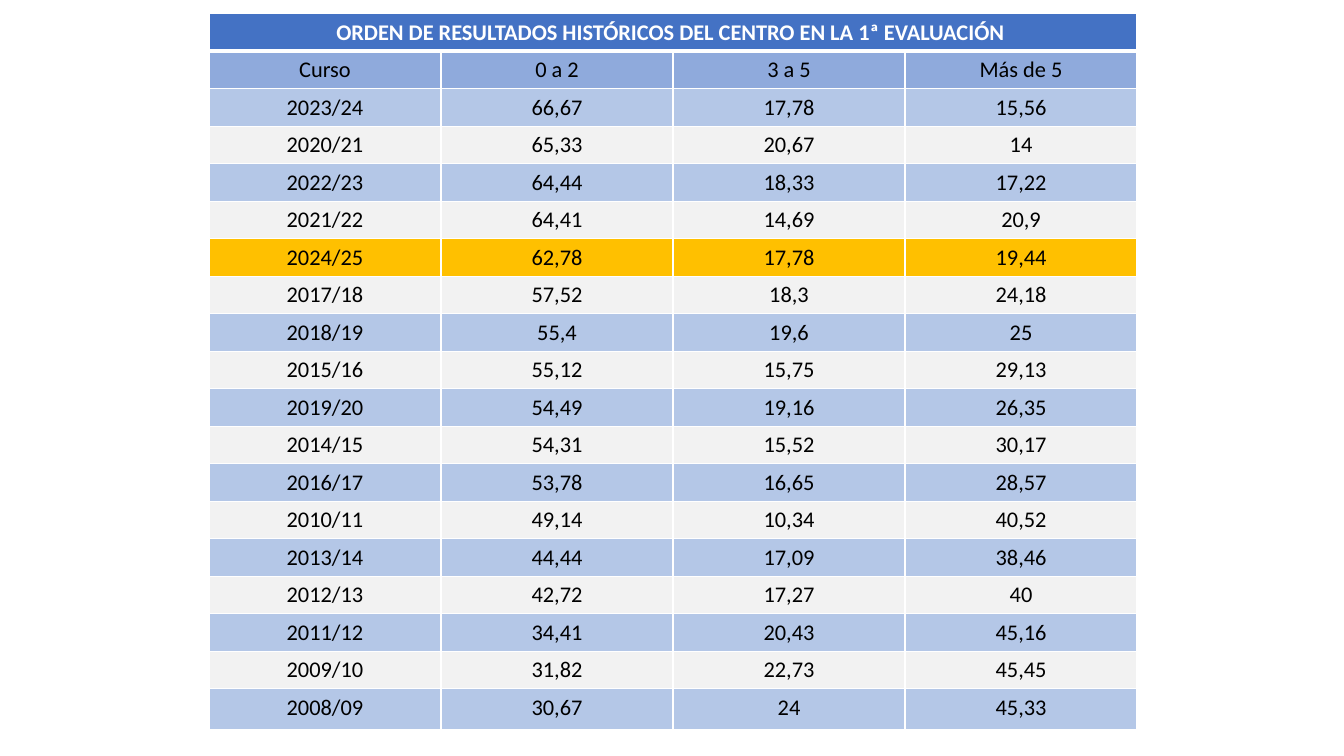
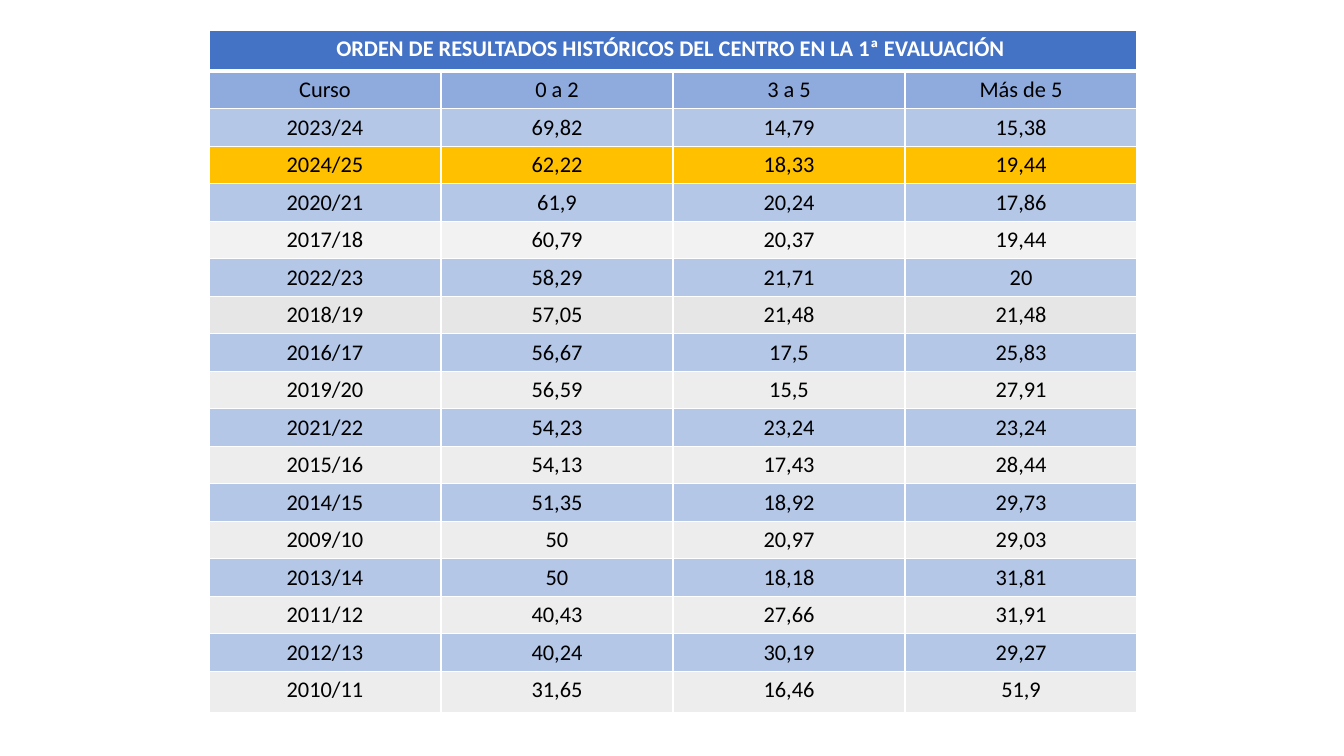
from lxml import etree
from pptx import Presentation
from pptx import util as u
from pptx.dml import color
from pptx.enum import text
from pptx.oxml import ns

PX = 9525
SLIDE_WIDTH, SLIDE_HEIGHT = 1280, 720
TABLE_LEFT, COLUMN_WIDTH = 199, 221
ROW_HEIGHT, TALL_ROW_HEIGHT = 35, 39
FONT_NAME, FONT_SIZE = "Calibri", 16
THIN, THICK = 1, 3

COLORS = {
    "title": "4472C4",
    "heading": "8FAADC",
    "band": "B4C7E7",
    "pale": "F2F2F2",
    "grey": "E7E6E6",
    "light": "EDEDED",
    "highlight": "FFC000",
    "white": "FFFFFF",
    "black": "000000",
}

TITLE = "ORDEN DE RESULTADOS HISTÓRICOS DEL CENTRO EN LA 1ª EVALUACIÓN "
HEADINGS = ("Curso", "0 a 2", "3 a 5", "Más de 5")
CURRENT_COURSE = "2024/25"

FIRST_RESULTS = (
    ("2023/24", "66,67", "17,78", "15,56"),
    ("2020/21", "65,33", "20,67", "14"),
    ("2022/23", "64,44", "18,33", "17,22"),
    ("2021/22", "64,41", "14,69", "20,9"),
    ("2024/25", "62,78", "17,78", "19,44"),
    ("2017/18", "57,52", "18,3", "24,18"),
    ("2018/19", "55,4", "19,6", "25"),
    ("2015/16", "55,12", "15,75", "29,13"),
    ("2019/20", "54,49", "19,16", "26,35"),
    ("2014/15", "54,31", "15,52", "30,17"),
    ("2016/17", "53,78", "16,65", "28,57"),
    ("2010/11", "49,14", "10,34", "40,52"),
    ("2013/14", "44,44", "17,09", "38,46"),
    ("2012/13", "42,72", "17,27", "40"),
    ("2011/12", "34,41", "20,43", "45,16"),
    ("2009/10", "31,82", "22,73", "45,45"),
    ("2008/09", "30,67", "24", "45,33"),
)

SECOND_RESULTS = (
    ("2023/24", "69,82", "14,79", "15,38"),
    ("2024/25", "62,22", "18,33", "19,44"),
    ("2020/21", "61,9", "20,24", "17,86"),
    ("2017/18", "60,79", "20,37", "19,44"),
    ("2022/23", "58,29", "21,71", "20"),
    ("2018/19", "57,05", "21,48", "21,48"),
    ("2016/17", "56,67", "17,5", "25,83"),
    ("2019/20", "56,59", "15,5", "27,91"),
    ("2021/22", "54,23", "23,24", "23,24"),
    ("2015/16", "54,13", "17,43", "28,44"),
    ("2014/15", "51,35", "18,92", "29,73"),
    ("2009/10", "50", "20,97", "29,03"),
    ("2013/14", "50", "18,18", "31,81"),
    ("2011/12", "40,43", "27,66", "31,91"),
    ("2012/13", "40,24", "30,19", "29,27"),
    ("2010/11", "31,65", "16,46", "51,9"),
)


def px(length):
    return u.Emu(length * PX)


def rgb(name):
    return color.RGBColor.from_string(COLORS[name])


def set_borders(cell, top=THIN, bottom=THIN):
    properties = cell._tc.get_or_add_tcPr()
    widths = {"lnL": THIN, "lnR": THIN, "lnT": top, "lnB": bottom}
    for position, (tag, width) in enumerate(widths.items()):
        line = etree.Element(ns.qn(f"a:{tag}"), w=str(u.Pt(width)))
        fill = etree.SubElement(line, ns.qn("a:solidFill"))
        etree.SubElement(fill, ns.qn("a:srgbClr"), val=COLORS["white"])
        properties.insert(position, line)


def fill_cell(cell, fill):
    cell.fill.solid()
    cell.fill.fore_color.rgb = rgb(fill)


def write_cell(cell, content, ink="black", bold=False):
    paragraph = cell.text_frame.paragraphs[0]
    paragraph.alignment = text.PP_ALIGN.CENTER
    run = paragraph.add_run()
    run.text = content
    run.font.name = FONT_NAME
    run.font.size = u.Pt(FONT_SIZE)
    run.font.bold = bold
    run.font.color.rgb = rgb(ink)


def add_title_row(table):
    cells = list(table.rows[0].cells)
    cells[0].merge(cells[-1])
    for cell in cells:
        fill_cell(cell, "title")
        set_borders(cell, bottom=THICK)
    write_cell(cells[0], TITLE, "white", True)


def add_row(table, index, values, fill, top=THIN):
    for cell, value in zip(table.rows[index].cells, values):
        fill_cell(cell, fill)
        set_borders(cell, top=top)
        write_cell(cell, value)


def row_fill(index, course, alternate, exceptions):
    if course == CURRENT_COURSE:
        return "highlight"
    if index % 2 == 0:
        return "band"
    return exceptions.get(course, alternate)


def add_results_slide(presentation, top, title_height, results, alternate, exceptions):
    slide = presentation.slides.add_slide(presentation.slide_layouts[6])
    heights = [title_height] + [ROW_HEIGHT] * len(results) + [TALL_ROW_HEIGHT]
    columns = len(HEADINGS)
    table = slide.shapes.add_table(
        len(heights), columns, px(TABLE_LEFT), px(top),
        px(COLUMN_WIDTH * columns), px(sum(heights)),
    ).table
    table.first_row = table.horz_banding = False
    for column in table.columns:
        column.width = px(COLUMN_WIDTH)
    for row, height in zip(table.rows, heights):
        row.height = px(height)
    add_title_row(table)
    add_row(table, 1, HEADINGS, "heading", top=THICK)
    for index, values in enumerate(results):
        fill = row_fill(index, values[0], alternate, exceptions)
        add_row(table, index + 2, values, fill)


def main():
    presentation = Presentation()
    presentation.slide_width = px(SLIDE_WIDTH)
    presentation.slide_height = px(SLIDE_HEIGHT)
    add_results_slide(presentation, 13, ROW_HEIGHT, FIRST_RESULTS, "pale", {})
    add_results_slide(
        presentation, 29, TALL_ROW_HEIGHT, SECOND_RESULTS, "light",
        {"2017/18": "pale", "2018/19": "grey"},
    )
    presentation.save("out.pptx")


if __name__ == "__main__":
    main()
